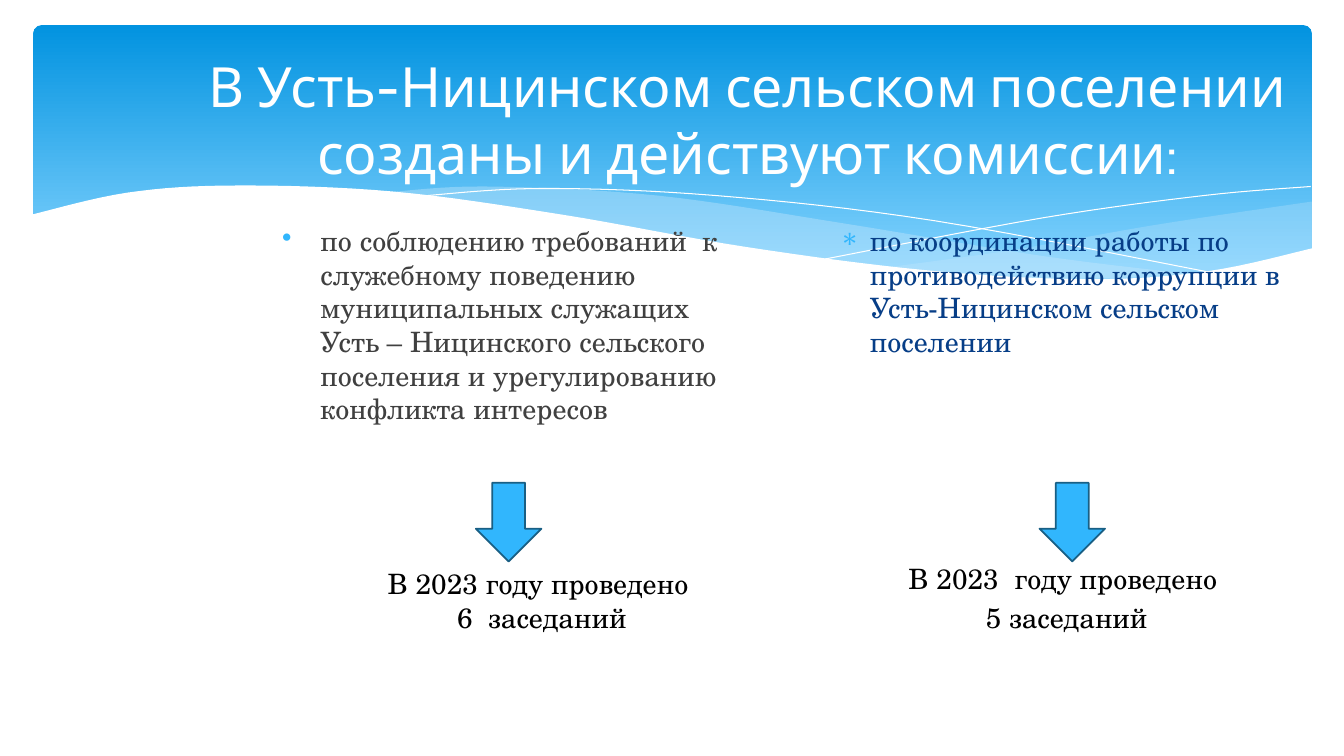
"""Build the slide on the commissions of the Ust-Nitsa rural settlement."""
from dataclasses import dataclass
from typing import Any, Optional

from lxml.etree import SubElement
from pptx import Presentation
from pptx.dml.color import RGBColor
from pptx.enum.shapes import MSO_SHAPE
from pptx.enum.text import MSO_ANCHOR, MSO_AUTO_SIZE, PP_ALIGN
from pptx.oxml.ns import qn
from pptx.util import Cm, Pt

HUES = {
    "white": "FFFFFF", "black": "000000", "gray": "404040", "navy": "073E87",
    "sky": "31B6FD", "edge": "195F84", "top": "0293E0", "low": "83D3FE", "mist": "C6E7FC",
}
SERIF = "TeX Gyre Schola"
FRAME = {"word_wrap": True, "auto_size": MSO_AUTO_SIZE.NONE}
INCH = 2.54
STEPS = 8

Spot = tuple[float, float]
Box = tuple[float, float, float, float]


@dataclass
class Wave:
    """An outline of smooth edges in inches, filled or drawn as a hairline."""
    edges: list[list[Spot]]
    fill: Optional[str] = None
    alpha: int = 100


@dataclass
class Note:
    """A text block in inches, with an optional bullet."""
    box: Box
    lines: list[str]
    hue: str
    mark: str = ""
    dent: float = 0
    gap: float = 0


WAVES = [
    Wave([[(13.01, 2), (11.47, 2.23), (10.05, 2.48), (8.82, 2.65)],
          [(8.82, 2.65), (10.71, 2.78), (11.96, 2.7), (13.01, 2.47)]], "mist", 29),
    Wave([[(11.9, 2.73), (10.34, 2.54), (8.39, 2.22), (6.52, 1.94), (4.82, 1.85), (3.82, 1.91)],
          [(3.82, 1.91), (5.99, 2.22), (8.02, 2.55), (9.98, 2.76), (11.9, 2.73)]], "mist", 40),
    Wave([[(4.12, 1.95), (5.35, 1.87), (7.1, 1.94), (9.27, 2.19), (12.1, 2.72)]]),
    Wave([[(8.18, 2.57), (10.35, 2.16), (11.94, 1.94), (13, 1.85)]]),
    Wave([[(13.03, 2.46), (11.98, 2.69), (10.78, 2.77), (9.18, 2.68), (7.4, 2.45),
           (5.58, 2.13), (3.9, 1.9), (2.35, 1.84), (1.27, 1.91), (0.31, 2.13)],
          [(0.31, 3.29), (13.03, 3.29)]], "white"),
]
NOTES = [
    Note((8.23, 2.17, 4.7, 1.6), ["по координации работы по противодействию коррупции "
                                 "в Усть-Ницинском сельском поселении"], "navy", "∗", 0.3),
    Note((8.23, 5.52, 4.7, 1), ["В 2023  году проведено ", "5 заседаний"], "black", gap=4),
    Note((2.7, 2.17, 4.69, 2.37), ["по соблюдению требований  к служебному поведению "
                                   "муниципальных служащих Усть – Ницинского сельского "
                                   "поселения и урегулированию конфликта интересов"],
         "gray", "•", 0.38),
    Note((3.04, 5.57, 4.67, 1.11), ["В 2023 году проведено ", "6  заседаний"], "black"),
]


def cm(inch: float) -> int:
    return Cm(inch * INCH)


def rgb(name: str) -> RGBColor:
    return RGBColor.from_string(HUES[name])


def put(thing: Any, look: dict[str, Any]) -> None:
    for key, value in look.items():
        setattr(thing, key, value)


def paint(shape: Any, hue: str) -> None:
    shape.fill.solid()
    shape.fill.fore_color.rgb = rgb(hue)


def blend(a: float, b: float, c: float, d: float, t: float) -> float:
    """Return the Catmull-Rom value between b and c."""
    return b + t / 2 * (c - a + t * (2 * a - 5 * b + 4 * c - d + t * (3 * (b - c) + d - a)))


def smooth(dots: list[Spot]) -> list[Spot]:
    """Return a dense curve through the dots."""
    line = [dots[0], *dots, dots[-1]]
    curve = [tuple(blend(*axis, step / STEPS) for axis in zip(*line[i:i + 4]))
             for i in range(len(dots) - 1) for step in range(STEPS)]
    return curve + [dots[-1]]


def add_panel(slide: Any) -> None:
    panel = slide.shapes.add_shape(MSO_SHAPE.ROUNDED_RECTANGLE, *map(cm, (0.33, 0.25, 12.68, 2.7)))
    panel.shadow.inherit = False
    panel.adjustments[0] = 0.03
    panel.line.fill.background()
    panel.fill.gradient()
    panel.fill.gradient_angle = 270
    for stop, place, hue in zip(panel.fill.gradient_stops, (0, 0.9), ("top", "low")):
        stop.position = place
        stop.color.rgb = rgb(hue)


def add_wave(slide: Any, wave: Wave) -> None:
    dots = [(cm(x), cm(y)) for edge in wave.edges for x, y in smooth(edge)]
    pen = slide.shapes.build_freeform(*dots[0])
    pen.add_line_segments(dots[1:], close=wave.fill is not None)
    shape = pen.convert_to_shape()
    shape.shadow.inherit = False
    if wave.fill is None:
        shape.fill.background()
        shape.line.color.rgb = rgb("white")
        shape.line.width = Pt(0)
        return
    paint(shape, wave.fill)
    shape.line.fill.background()
    if wave.alpha < 100:
        tint = shape._element.spPr.find(qn("a:solidFill"))[0]
        SubElement(tint, qn("a:alpha"), val=str(wave.alpha * 1000))


def add_mark(para: Any, mark: str, dent: float) -> None:
    props = para._p.get_or_add_pPr()
    props.set("marL", str(cm(dent)))
    props.set("indent", str(-cm(dent)))
    tint = SubElement(props, qn("a:buClr"))
    SubElement(tint, qn("a:srgbClr"), val=HUES["sky"])
    SubElement(props, qn("a:buChar"), char=mark)


def add_note(slide: Any, note: Note) -> None:
    frame = slide.shapes.add_textbox(*map(cm, note.box)).text_frame
    put(frame, FRAME)
    frame.text = "\n".join(note.lines)
    for rank, para in enumerate(frame.paragraphs):
        put(para, {"alignment": PP_ALIGN.LEFT if note.mark else PP_ALIGN.CENTER,
                   "space_before": Pt(note.gap if rank else 0)})
        font = para.runs[0].font
        put(font, {"name": SERIF, "size": Pt(20)})
        font.color.rgb = rgb(note.hue)
        if note.mark:
            add_mark(para, note.mark, note.dent)


def add_arrow(slide: Any, left: float) -> None:
    arrow = slide.shapes.add_shape(MSO_SHAPE.DOWN_ARROW, *map(cm, (left, 4.79, 0.65, 0.78)))
    arrow.shadow.inherit = False
    paint(arrow, "sky")
    arrow.line.color.rgb = rgb("edge")
    arrow.line.width = Pt(1.25)


def set_title(slide: Any) -> None:
    title = slide.shapes.title
    put(title, dict(zip(("left", "top", "width", "height"), map(cm, (1.9, 0.57, 11.03, 1.22)))))
    frame = title.text_frame
    frame.text = "В Усть-Ницинском сельском поселении созданы и действуют комиссии:"
    put(frame, FRAME | {"vertical_anchor": MSO_ANCHOR.MIDDLE})
    para = frame.paragraphs[0]
    para.alignment = PP_ALIGN.CENTER
    font = para.runs[0].font
    put(font, {"name": "Cabin", "size": Pt(39.6)})
    font.color.rgb = rgb("white")
    slide.shapes._spTree.append(title._element)


def main() -> None:
    deck = Presentation()
    put(deck, {"slide_width": cm(13.33), "slide_height": cm(7.5)})
    slide = deck.slides.add_slide(deck.slide_layouts[5])
    add_panel(slide)
    for wave in WAVES:
        add_wave(slide, wave)
    set_title(slide)
    for note in NOTES:
        add_note(slide, note)
    for left in (4.72, 10.31):
        add_arrow(slide, left)
    deck.save("out.pptx")


if __name__ == "__main__":
    main()
